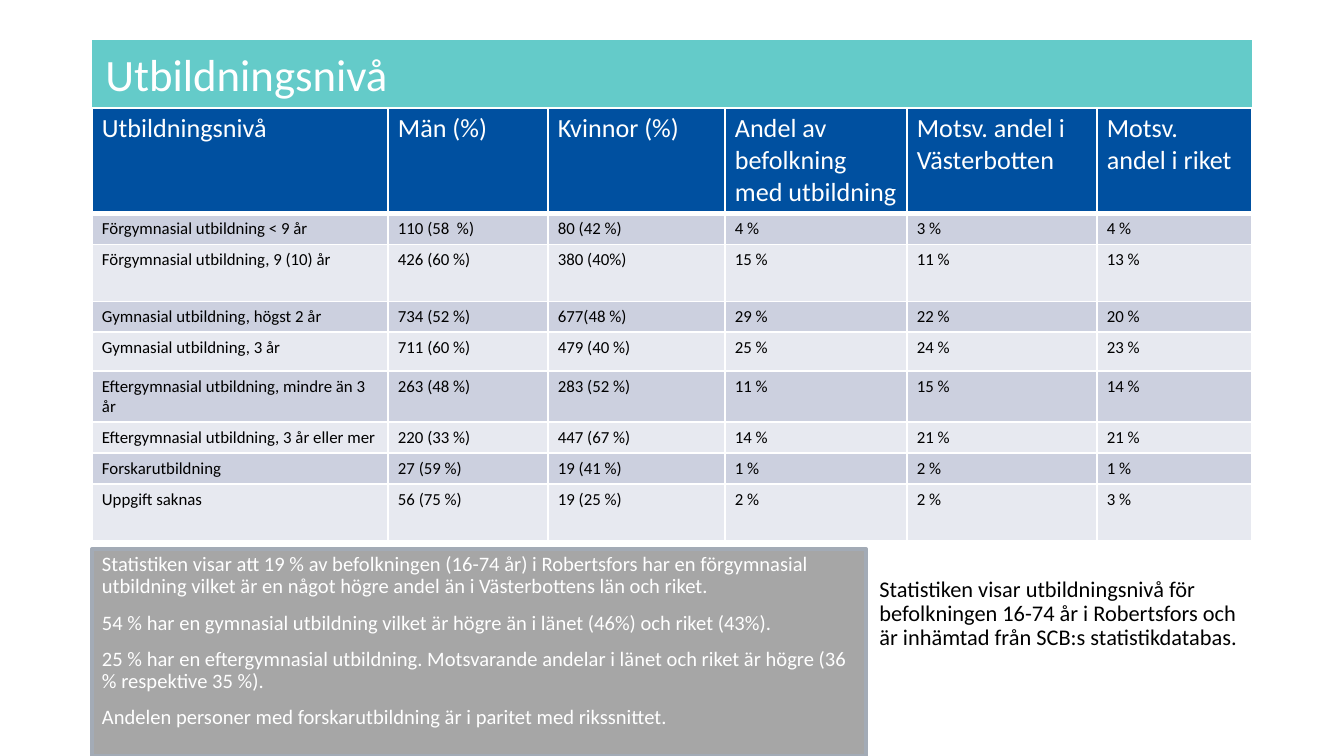
from lxml.etree import SubElement
from pptx import Presentation
from pptx.dml.color import RGBColor
from pptx.enum.shapes import MSO_SHAPE
from pptx.enum.text import MSO_ANCHOR, MSO_AUTO_SIZE, PP_ALIGN
from pptx.oxml.ns import qn
from pptx.util import Emu, Inches, Pt

SCALE = Inches(10) / 1344  # EMU per px
FONT = "Calibri"
COLORS = {
    "banner": "64CBC9",
    "header": "0050A0",
    "band_dark": "CCD0DF",
    "band_light": "E7E9F0",
    "summary": "A6A6A6",
    "summary_edge": "A3ABB6",
    "white": "FFFFFF",
    "black": "000000",
}

COLUMN_WIDTHS = [296, 160, 177, 182, 190, 155]
ROW_HEIGHTS = [105, 31, 57, 31, 39, 51, 31, 31, 57]
EDUCATION_ROWS = [
    ["Utbildningsnivå", "Män (%)", "Kvinnor (%)", "Andel av befolkning med utbildning",
     "Motsv. andel i Västerbotten", "Motsv. andel i riket"],
    ["Förgymnasial utbildning < 9 år", "110 (58  %)", "80 (42 %)", "4 %", "3 %", "4 %"],
    ["Förgymnasial utbildning, 9 (10) år", "426 (60 %)", "380 (40%)", "15 %", "11 %", "13 %"],
    ["Gymnasial utbildning, högst 2 år", "734 (52 %)", "677(48 %)", "29 %", "22 %", "20 %"],
    ["Gymnasial utbildning, 3 år", "711 (60 %)", "479 (40 %)", "25 %", "24 %", "23 %"],
    ["Eftergymnasial utbildning, mindre än 3 år", "263 (48 %)", "283 (52 %)",
     "11 %", "15 %", "14 %"],
    ["Eftergymnasial utbildning, 3 år eller mer", "220 (33 %)", "447 (67 %)",
     "14 %", "21 %", "21 %"],
    ["Forskarutbildning", "27 (59 %)", "19 (41 %)", "1 %", "2 %", "1 %"],
    ["Uppgift saknas", "56 (75 %)", "19 (25 %)", "2 %", "2 %", "3 %"],
]
SUMMARY = [
    "Statistiken visar att 19 % av befolkningen (16-74 år) i Robertsfors har en förgymnasial "
    "utbildning vilket är en något högre andel än i Västerbottens län och riket.",
    "54 % har en gymnasial utbildning vilket är högre än i länet (46%) och riket (43%).",
    "25 % har en eftergymnasial utbildning. Motsvarande andelar i länet och riket är högre "
    "(36 % respektive 35 %).",
    "Andelen personer med forskarutbildning är i paritet med rikssnittet.",
]
SOURCE_NOTE = [
    "Statistiken visar utbildningsnivå för befolkningen 16-74 år i Robertsfors och är "
    "inhämtad från SCB:s statistikdatabas."
]


def px(length):
    return Emu(round(length * SCALE))


def paint(fill, color):
    fill.solid()
    fill.fore_color.rgb = RGBColor.from_string(COLORS[color])


def place(shape, box):
    shape.left, shape.top, shape.width, shape.height = map(px, box)


def set_insets(target):
    """Give a cell or text frame the narrow margins shared by table and summary."""
    target.margin_left = target.margin_right = px(10)
    target.margin_top = target.margin_bottom = px(5)


def write(frame, texts, size, color, line_spacing=None, gap=0):
    frame.word_wrap = True
    for index, text in enumerate(texts):
        para = frame.paragraphs[0] if index == 0 else frame.add_paragraph()
        para.alignment = PP_ALIGN.LEFT
        para.line_spacing = line_spacing
        para.space_before = Pt(gap if index else 0)
        span = para.add_run()
        span.text = text
        span.font.name = FONT
        span.font.size = Pt(size)
        span.font.bold = False
        span.font.color.rgb = RGBColor.from_string(COLORS[color])


def add_border(cell, side, points):
    properties = cell._tc.get_or_add_tcPr()
    line = SubElement(properties, qn(f"a:ln{side}"), w=str(Pt(points)))
    fill = SubElement(line, qn("a:solidFill"))
    SubElement(fill, qn("a:srgbClr"), val=COLORS["white"])


def fill_title(page, box):
    title = page.shapes.title
    place(title, box)
    paint(title.fill, "banner")
    frame = title.text_frame
    frame.auto_size = MSO_AUTO_SIZE.NONE
    frame.vertical_anchor = MSO_ANCHOR.MIDDLE
    write(frame, ["Utbildningsnivå"], 24, "white")


def add_education_table(page, box):
    table = page.shapes.add_table(len(ROW_HEIGHTS), len(COLUMN_WIDTHS), *map(px, box)).table
    for column, width in zip(table.columns, COLUMN_WIDTHS):
        column.width = px(width)
    for row_index, (row, height) in enumerate(zip(table.rows, ROW_HEIGHTS)):
        row.height = px(height)
        is_header = row_index == 0
        band = "header" if is_header else "band_dark" if row_index % 2 else "band_light"
        for cell, text in zip(row.cells, EDUCATION_ROWS[row_index]):
            # The rule under the header is thicker than the others
            top, bottom = (3 if row_index == 1 else 1), (3 if is_header else 1)
            for side, points in (("L", 1), ("R", 1), ("T", top), ("B", bottom)):
                add_border(cell, side, points)
            paint(cell.fill, band)
            set_insets(cell)
            write(cell.text_frame, [text], 14 if is_header else 9,
                  "white" if is_header else "black")


def add_summary(page, box):
    panel = page.shapes.add_shape(MSO_SHAPE.RECTANGLE, *map(px, box))
    panel.shadow.inherit = False
    paint(panel.fill, "summary")
    paint(panel.line.fill, "summary_edge")
    panel.line.width = Pt(2)
    frame = panel.text_frame
    set_insets(frame)
    frame.vertical_anchor = MSO_ANCHOR.TOP
    write(frame, SUMMARY, 11, "white", line_spacing=0.9, gap=7.5)


def fill_source_note(page, box):
    note = page.placeholders[1]
    place(note, box)
    frame = note.text_frame
    frame.auto_size = MSO_AUTO_SIZE.NONE
    # Plain text without the template's bullet
    properties = frame.paragraphs[0]._p.get_or_add_pPr()
    properties.set("marL", "0")
    properties.set("indent", "0")
    SubElement(properties, qn("a:buNone"))
    write(frame, SOURCE_NOTE, 12, "black", line_spacing=0.9)


def main():
    deck = Presentation()
    deck.slide_width, deck.slide_height = px(1344), px(756)
    page = deck.slides.add_slide(deck.slide_layouts[1])
    fill_title(page, (92, 40, 1160, 68))
    add_education_table(page, (92, 108, sum(COLUMN_WIDTHS), sum(ROW_HEIGHTS)))
    add_summary(page, (92, 549, 774, 207))
    fill_source_note(page, (866, 571, 388, 145))
    deck.save("out.pptx")


if __name__ == "__main__":
    main()
